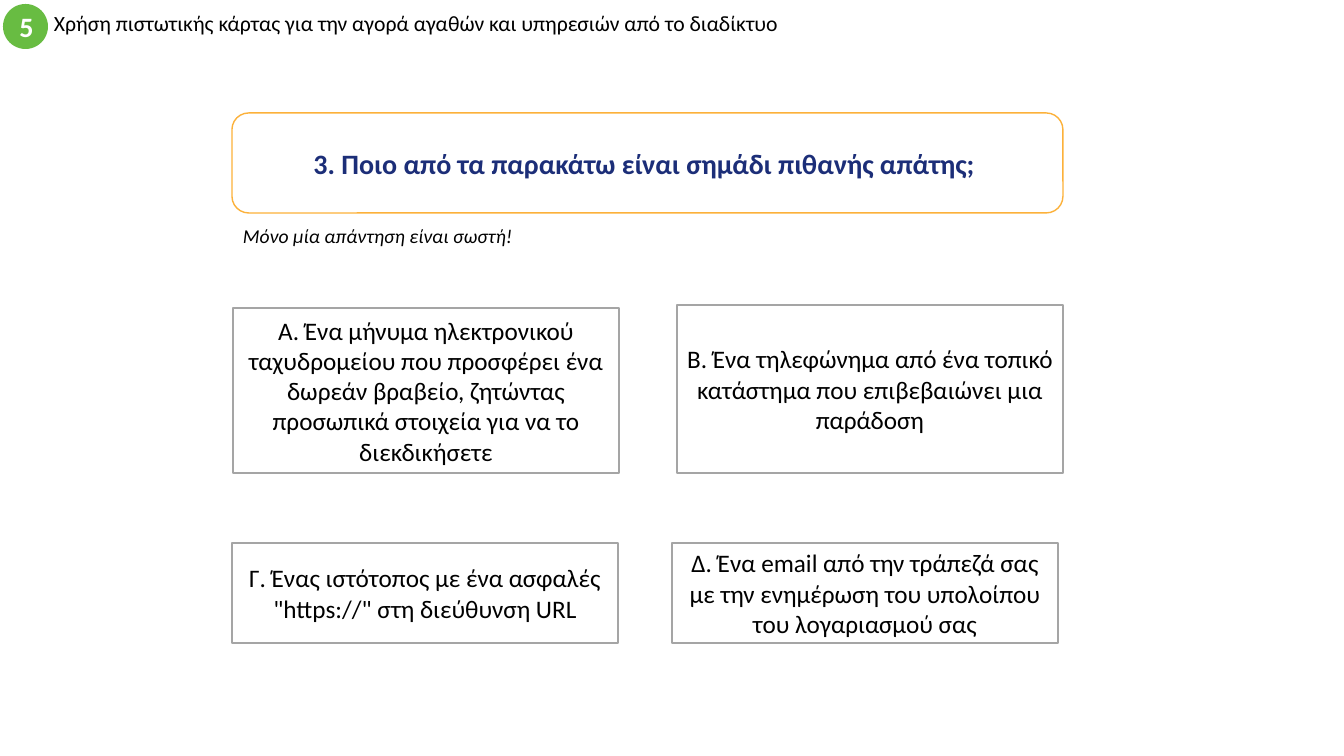
from pptx import Presentation
from pptx import util as u
from pptx.dml.color import RGBColor
from pptx.enum import shapes, text

TITLE = "Χρήση πιστωτικής κάρτας για την αγορά αγαθών και υπηρεσιών από το διαδίκτυο"
NUMBER = "5"
QUESTION = "3. Ποιο από τα παρακάτω είναι σημάδι πιθανής απάτης; "
HINT = "Μόνο μία απάντηση είναι σωστή!"
# left, top, height in px, then wording
ANSWERS = [
    (233, 308, 165, "A. Ένα μήνυμα ηλεκτρονικού ταχυδρομείου που προσφέρει ένα "
                    "δωρεάν βραβείο, ζητώντας προσωπικά στοιχεία για να το διεκδικήσετε"),
    (677, 305, 168, "B. Ένα τηλεφώνημα από ένα τοπικό κατάστημα που επιβεβαιώνει "
                    "μια παράδοση"),
    (232, 543, 100, "Γ. Ένας ιστότοπος με ένα ασφαλές \"https://\" στη διεύθυνση URL"),
    (672, 543, 100, "Δ. Ένα email από την τράπεζά σας με την ενημέρωση του "
                    "υπολοίπου του λογαριασμού σας"),
]
ANSWER_W = 386
WHITE, BLACK, GREEN = "FFFFFF", "000000", "68BC42"
ORANGE, NAVY, GREY = "FCB13A", "1C2E78", "A5A5A5"
KIND = shapes.MSO_SHAPE
CENTER, LEFT = text.PP_ALIGN.CENTER, text.PP_ALIGN.LEFT
MIDDLE, TOP = text.MSO_ANCHOR.MIDDLE, text.MSO_ANCHOR.TOP
SCALE = 914400 / 100.8


def px(*sizes):
    return [u.Emu(round(size * SCALE)) for size in sizes]


def color(code):
    return RGBColor.from_string(code)


def write(shape, words, size=18, ink=BLACK, bold=False, italic=False,
          align=CENTER, anchor=MIDDLE, spacing=None):
    frame = shape.text_frame
    frame.word_wrap = True
    frame.vertical_anchor = anchor
    para = frame.paragraphs[0]
    para.alignment = align
    para.line_spacing = spacing
    run = para.add_run()
    run.text = words
    font = run.font
    font.name, font.size = "Calibri", u.Pt(size)
    font.bold, font.italic = bold, italic
    font.color.rgb = color(ink)


def draw(slide, kind, box, fill=WHITE, line=None, width=1):
    shape = slide.shapes.add_shape(kind, *px(*box))
    shape.shadow.inherit = False
    shape.fill.solid()
    shape.fill.fore_color.rgb = color(fill)
    if line:
        shape.line.color.rgb = color(line)
        shape.line.width = u.Pt(width)
    else:
        shape.line.fill.background()
    return shape


def main():
    deck = Presentation()
    deck.slide_width, deck.slide_height = px(1344, 756)
    slide = deck.slides.add_slide(deck.slide_layouts[6])

    title = slide.shapes.add_textbox(*px(44, 4, 806, 45))
    write(title, TITLE, size=15.5, align=LEFT, spacing=0.7)
    badge = draw(slide, KIND.OVAL, (3, 4, 45, 45), fill=GREEN)
    write(badge, NUMBER, size=20, ink=WHITE, bold=True)

    question = draw(slide, KIND.ROUNDED_RECTANGLE, (232, 113, 831, 100), line=ORANGE)
    write(question, QUESTION, size=20, ink=NAVY, bold=True)
    hint = slide.shapes.add_textbox(*px(233, 219, 341, 34))
    write(hint, HINT, size=14, italic=True, align=LEFT, anchor=TOP)

    for left, top, height, words in ANSWERS:
        box = (left, top, ANSWER_W, height)
        write(draw(slide, KIND.RECTANGLE, box, line=GREY, width=2), words)

    deck.save("out.pptx")


if __name__ == "__main__":
    main()
